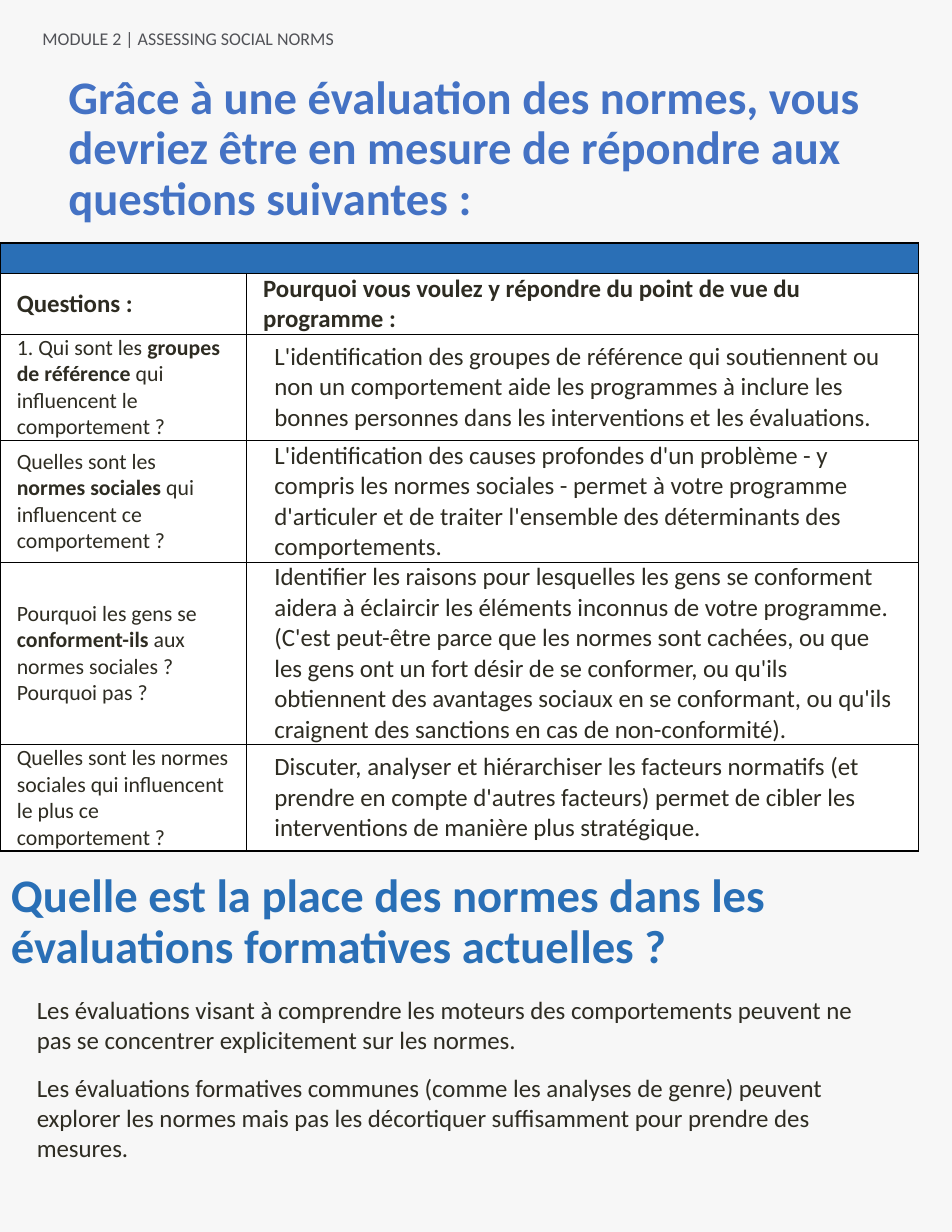
from lxml import etree
from pptx import Presentation
from pptx.dml.color import RGBColor
from pptx.enum.text import MSO_ANCHOR, MSO_AUTO_SIZE, PP_ALIGN
from pptx.oxml.ns import qn
from pptx.util import Inches, Pt

TOP, MIDDLE = MSO_ANCHOR.TOP, MSO_ANCHOR.MIDDLE
NO_FIT = MSO_AUTO_SIZE.NONE
LEFT, JUSTIFY = PP_ALIGN.LEFT, PP_ALIGN.JUSTIFY

FONT = "Calibri"
PAPER = RGBColor(0xF7, 0xF7, 0xF7)
WHITE = RGBColor(0xFF, 0xFF, 0xFF)
INK = RGBColor(0x2E, 0x2C, 0x22)
GREY = RGBColor(0x51, 0x52, 0x57)
TITLE_BLUE = RGBColor(0x44, 0x72, 0xC4)
HEADING_BLUE = RGBColor(0x29, 0x6F, 0xB6)
BAND_BLUE = RGBColor(0x2A, 0x6F, 0xB6)

TITLE = ("Grâce à une évaluation des normes, vous devriez être en mesure "
         "de répondre aux questions suivantes :")
HEADING = "Quelle est la place des normes dans les évaluations formatives actuelles ?"
NOTES = [
    "Les évaluations visant à comprendre les moteurs des comportements peuvent ne "
    "pas se concentrer explicitement sur les normes.",
    "Les évaluations formatives communes (comme les analyses de genre) peuvent "
    "explorer les normes mais pas les décortiquer suffisamment pour prendre des mesures.",
]
COLUMN_WIDTHS = [2.2, 6]
ROW_HEIGHTS = [0.25, 0.51, 0.93, 0.93, 1.27, 0.93]
# Double asterisks enclose bold words
HEADERS = ("**Questions :**",
           "**Pourquoi vous voulez y répondre du point de vue du programme :**")
QUESTIONS = [
    ("1. Qui sont les **groupes de référence **qui influencent le comportement ?",
     "L'identification des groupes de référence qui soutiennent ou non un comportement "
     "aide les programmes à inclure les bonnes personnes dans les interventions et les "
     "évaluations."),
    ("Quelles sont les **normes sociales **qui influencent ce comportement ?",
     "L'identification des causes profondes d'un problème - y compris les normes "
     "sociales - permet à votre programme d'articuler et de traiter l'ensemble des "
     "déterminants des comportements."),
    ("Pourquoi les gens se **conforment-ils **aux normes sociales ? Pourquoi pas ?",
     "Identifier les raisons pour lesquelles les gens se conforment aidera à éclaircir "
     "les éléments inconnus de votre programme. (C'est peut-être parce que les normes "
     "sont cachées, ou que les gens ont un fort désir de se conformer, ou qu'ils "
     "obtiennent des avantages sociaux en se conformant, ou qu'ils craignent des "
     "sanctions en cas de non-conformité)."),
    ("Quelles sont les normes sociales qui influencent le plus ce comportement ?",
     "Discuter, analyser et hiérarchiser les facteurs normatifs (et prendre en compte "
     "d'autres facteurs) permet de cibler les interventions de manière plus stratégique."),
]


def add_runs(p, text, size, color, bold=False):
    for i, part in enumerate(text.split("**")):
        if part:
            r = p.add_run()
            r.text = part
            r.font.name = FONT
            r.font.size = Pt(size)
            r.font.color.rgb = color
            r.font.bold = bold or i % 2 == 1


def fill_text(sp, texts, size, color, bold=False, align=LEFT, line=None, after=0):
    tf = sp.text_frame
    tf.word_wrap = True
    tf.auto_size = NO_FIT
    tf.vertical_anchor = TOP
    for i, text in enumerate(texts):
        p = tf.add_paragraph() if i else tf.paragraphs[0]
        p.alignment = align
        p.line_spacing = line
        p.space_after = Pt(after)
        add_runs(p, text, size, color, bold)


def add_text(slide, box, texts, size, color, **style):
    sp = slide.shapes.add_textbox(*map(Inches, box))
    fill_text(sp, texts, size, color, **style)


def add_title(slide, box):
    sp = slide.shapes.title
    sp.left, sp.top, sp.width, sp.height = map(Inches, box)
    fill_text(sp, [TITLE], 30, TITLE_BLUE, bold=True, line=0.9)


def style_cell(cell, color):
    cell.margin_left = cell.margin_right = Inches(0.15)
    cell.margin_top = cell.margin_bottom = 0
    cell.vertical_anchor = MIDDLE
    # Black one-point border on every side
    tc_pr = cell._tc.get_or_add_tcPr()
    for side in ("a:lnL", "a:lnR", "a:lnT", "a:lnB"):
        ln = etree.SubElement(tc_pr, qn(side), w=str(Pt(1)))
        fill = etree.SubElement(ln, qn("a:solidFill"))
        etree.SubElement(fill, qn("a:srgbClr"), val="000000")
    cell.fill.solid()
    cell.fill.fore_color.rgb = color


def add_question_table(slide, box):
    frame = slide.shapes.add_table(len(ROW_HEIGHTS), len(COLUMN_WIDTHS),
                                   *map(Inches, box))
    table = frame.table
    for column, width in zip(table.columns, COLUMN_WIDTHS):
        column.width = Inches(width)
    for row, height in zip(table.rows, ROW_HEIGHTS):
        row.height = Inches(height)

    # Empty blue band across the top
    for cell in table.rows[0].cells:
        style_cell(cell, BAND_BLUE)
        p = cell.text_frame.paragraphs[0]
        etree.SubElement(p._p, qn("a:endParaRPr"), sz="1600")
    table.cell(0, 0).merge(table.cell(0, 1))

    # Headers, then questions with their reasons
    for i, texts in enumerate([HEADERS] + QUESTIONS, start=1):
        for j, text in enumerate(texts):
            cell = table.cell(i, j)
            style_cell(cell, WHITE)
            p = cell.text_frame.paragraphs[0]
            if i > 1 and j == 1:
                p_pr = p._p.get_or_add_pPr()
                p_pr.set("marL", str(Inches(0.1)))
                p_pr.set("indent", "0")
            add_runs(p, text, 14 if i > 1 and j == 0 else 16, INK)


def main():
    prs = Presentation()
    prs.slide_width, prs.slide_height = Inches(8.5), Inches(11)
    slide = prs.slides.add_slide(prs.slide_layouts[5])
    slide.background.fill.solid()
    slide.background.fill.fore_color.rgb = PAPER

    # Running header
    add_text(slide, (0.28, 0.2, 5.55, 0.3), ["MODULE 2 | ASSESSING SOCIAL NORMS"],
             11.5, GREY, align=JUSTIFY)
    add_title(slide, (0.51, 0.61, 7.64, 0.54))
    add_question_table(slide, (0, 2.17, 8.2, 5.57))
    # Closing section
    add_text(slide, (0, 7.74, 8.93, 2.65), [HEADING], 30, HEADING_BLUE,
             bold=True, line=0.9)
    add_text(slide, (0.23, 8.83, 7.49, 1.35), NOTES, 16, INK, after=12)
    prs.save("out.pptx")


if __name__ == "__main__":
    main()
